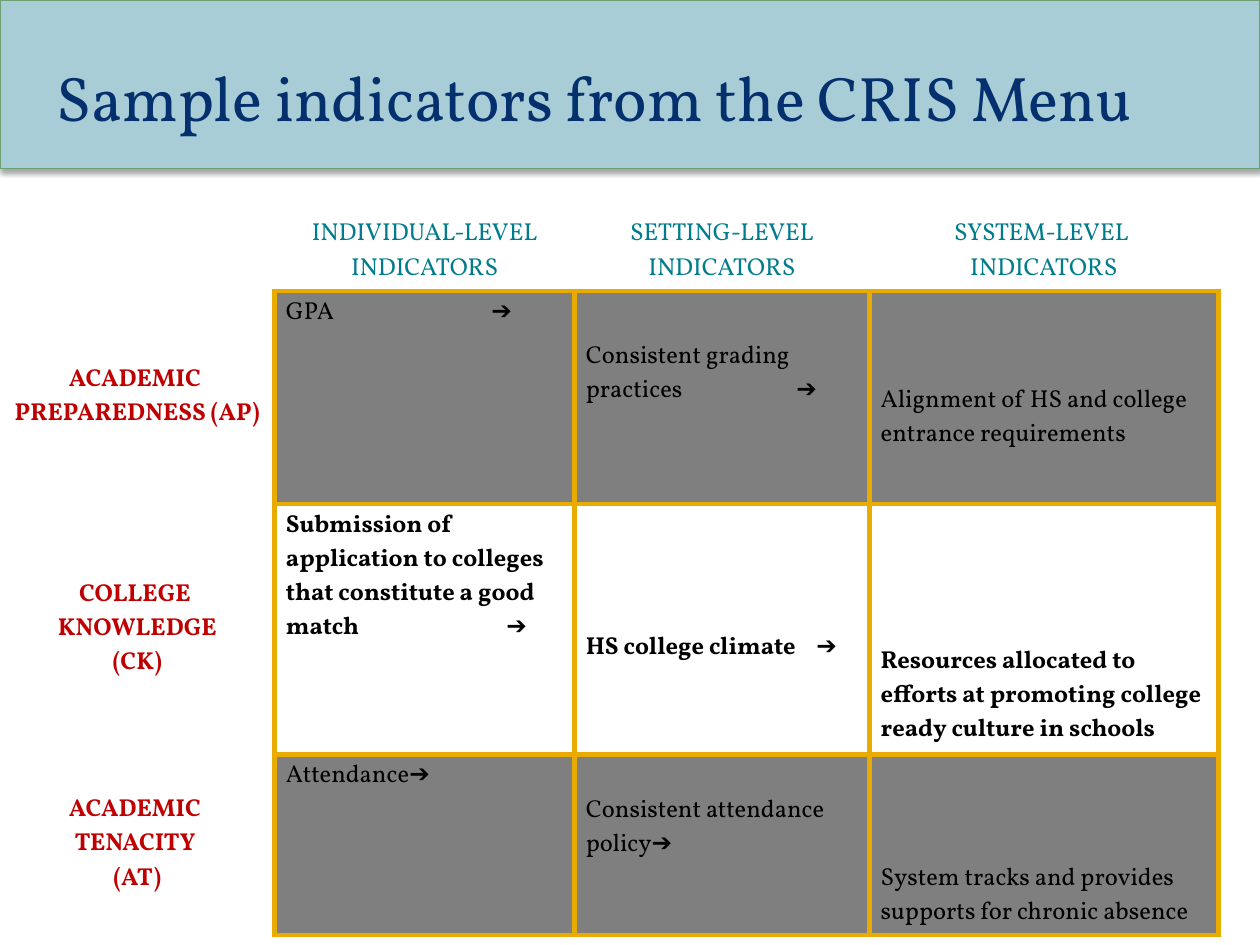
from lxml import etree
from pptx import Presentation
from pptx.dml.color import RGBColor
from pptx.enum.shapes import MSO_SHAPE
from pptx.enum.text import MSO_ANCHOR, PP_ALIGN
from pptx.oxml.ns import qn
from pptx.util import Inches, Pt

LEFT, CENTER = PP_ALIGN.LEFT, PP_ALIGN.CENTER
TOP, MIDDLE, BOTTOM = MSO_ANCHOR.TOP, MSO_ANCHOR.MIDDLE, MSO_ANCHOR.BOTTOM
FONT = "Vollkorn"
COLORS = {"band": "A8CDD7", "band line": "6EA172", "title": "04306D",
          "head": "007C8C", "label": "C00000", "text": "000000",
          "grid": "EAAB00", "gray": "7F7F7F", "white": "FFFFFF"}

# Content
TITLE = "Sample indicators from the CRIS Menu"
HEADS = ["INDIVIDUAL-LEVEL INDICATORS", "SETTING-LEVEL INDICATORS",
         "SYSTEM-LEVEL \nINDICATORS"]
# Each indicator: text, lines and paragraph gaps it sits below, arrow tab stop
ROWS = [
    {"label": "ACADEMIC \nPREPAREDNESS (AP)", "fill": "gray", "bold": False,
     "items": [("GPA\t➔", 0, 0, 1.63),
               ("Consistent grading practices\t➔", 1, 1, 1.67),
               ("Alignment of HS and college entrance requirements", 2, 2, None)]},
    {"label": "COLLEGE \nKNOWLEDGE\n(CK)", "fill": None, "bold": True,
     "items": [("Submission of application to colleges that constitute a good match\t➔",
                0, 0, 1.75),
               ("HS college climate\t➔", 3, 2, 1.83),
               ("Resources allocated to efforts at promoting college ready "
                "culture in schools", 4, 0, None)]},
    {"label": "ACADEMIC \nTENACITY \n(AT)", "fill": "gray", "bold": False,
     "items": [("Attendance➔", 0, 0, None),
               ("Consistent attendance policy➔", 1, 0, None),
               ("System tracks and provides supports for chronic absence", 3, 0, None)]},
]

# Grid, in inches
TABLE_TOP = 1.66
COLUMN_WIDTHS = [2.18, 2.38, 2.34, 2.77]
ROW_HEIGHTS = [0.65, 1.69, 1.99, 1.43]
LINE, GAP = 0.27, 0.08
SIDE_INSET, INSET = 0.09, 0.04


def rgb(name):
    return RGBColor.from_string(COLORS[name])


def write(frame, text, size=14, color="text", bold=False, align=LEFT, tab=None):
    """Write one paragraph per line; the arrow itself is never bold."""
    for index, line in enumerate(text.split("\n")):
        para = frame.paragraphs[0] if index == 0 else frame.add_paragraph()
        para.alignment = align
        if tab:
            stops = etree.SubElement(para._p.get_or_add_pPr(), qn("a:tabLst"))
            etree.SubElement(stops, qn("a:tab"), pos=str(Inches(tab)), algn="l")
        body, arrow, _ = line.partition("➔")
        for part, weight in ((body, bold), (arrow, False)):
            if part:
                span = para.add_run()
                span.text = part
                span.font.name, span.font.size = FONT, Pt(size)
                span.font.bold = weight
                span.font.color.rgb = rgb(color)


def set_borders(cell, sides):
    """Draw grid lines on the given sides and clear the others."""
    properties = cell._tc.get_or_add_tcPr()
    for index, side in enumerate("LRTB"):
        line = etree.Element(qn("a:ln" + side), w=str(Pt(3)))
        if side in sides:
            fill = etree.SubElement(line, qn("a:solidFill"))
            etree.SubElement(fill, qn("a:srgbClr"), val=COLORS["grid"])
        else:
            etree.SubElement(line, qn("a:noFill"))
        properties.insert(index, line)


def fill_cell(cell, text="", fill="white", sides="", anchor=TOP, drop=0, **style):
    cell.margin_left = cell.margin_right = Inches(SIDE_INSET)
    cell.margin_top, cell.margin_bottom = Inches(INSET + drop), Inches(INSET)
    cell.vertical_anchor = anchor
    if fill:
        cell.fill.solid()
        cell.fill.fore_color.rgb = rgb(fill)
    else:
        cell.fill.background()
    set_borders(cell, sides)
    write(cell.text_frame, text, **style)


def add_band(page, width):
    band = page.shapes.add_shape(MSO_SHAPE.RECTANGLE, 0, 0, width, Inches(1.34))
    band.fill.solid()
    band.fill.fore_color.rgb = rgb("band")
    band.line.color.rgb = rgb("band line")
    band.line.width = Pt(0.75)
    band.shadow.inherit = False
    effects = band._element.spPr.find(qn("a:effectLst"))
    shadow = etree.SubElement(effects, qn("a:outerShdw"), blurRad=str(Pt(3.1)),
                              dist=str(Pt(1.8)), dir="5400000", rotWithShape="0")
    shade = etree.SubElement(shadow, qn("a:srgbClr"), val="000000")
    etree.SubElement(shade, qn("a:alpha"), val="35000")


def add_title(page):
    box = page.shapes.add_textbox(Inches(0.35), Inches(0.2), Inches(9.65), Inches(1.13))
    box.text_frame.word_wrap = True
    box.text_frame.vertical_anchor = MIDDLE
    write(box.text_frame, TITLE, size=36, color="title")


def add_indicators(page):
    table = page.shapes.add_table(
        len(ROW_HEIGHTS), len(COLUMN_WIDTHS), 0, Inches(TABLE_TOP),
        Inches(sum(COLUMN_WIDTHS)), Inches(sum(ROW_HEIGHTS))).table
    table.first_row = table.horz_banding = False
    for column, width in zip(table.columns, COLUMN_WIDTHS):
        column.width = Inches(width)
    for row, height in zip(table.rows, ROW_HEIGHTS):
        row.height = Inches(height)

    # Header row
    fill_cell(table.cell(0, 0))
    for col, head in enumerate(HEADS, 1):
        fill_cell(table.cell(0, col), head, sides="B", anchor=BOTTOM,
                  color="head", align=CENTER)

    # Labels and indicators
    for row, group in enumerate(ROWS, 1):
        fill_cell(table.cell(row, 0), group["label"], sides="R", anchor=MIDDLE,
                  color="label", bold=True, align=CENTER)
        for col, (text, lines, gaps, tab) in enumerate(group["items"], 1):
            fill_cell(table.cell(row, col), text, fill=group["fill"], sides="LRTB",
                      drop=lines * LINE + gaps * GAP, bold=group["bold"], tab=tab)


def main():
    deck = Presentation()
    deck.slide_width, deck.slide_height = Inches(10), Inches(7.5)
    page = deck.slides.add_slide(deck.slide_layouts[6])
    add_band(page, deck.slide_width)
    add_title(page)
    add_indicators(page)
    deck.save("out.pptx")


if __name__ == "__main__":
    main()
